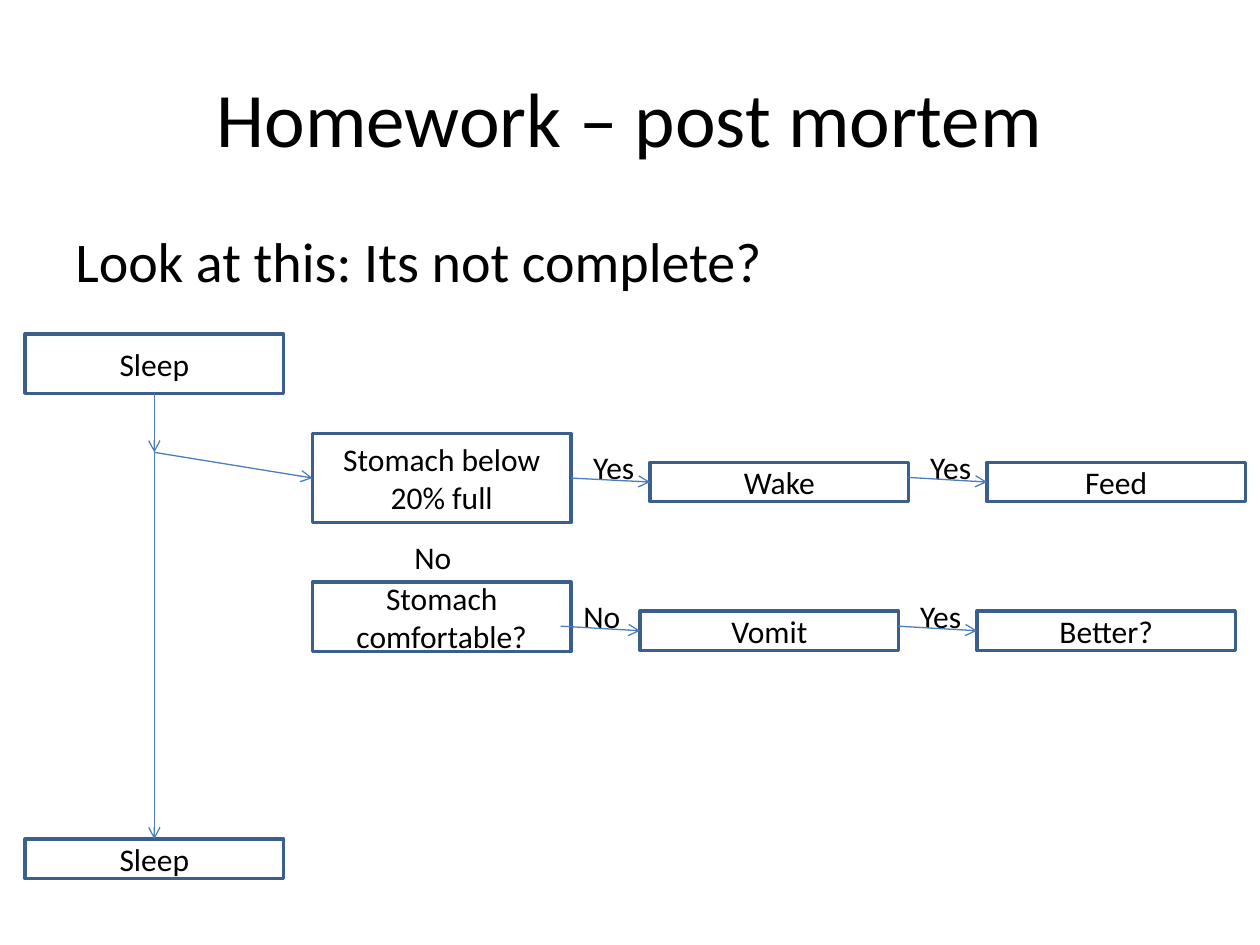
from lxml import etree
from pptx import Presentation
from pptx import util as u
from pptx.dml.color import RGBColor
from pptx.enum import shapes, text
from pptx.oxml import ns

BLACK, WHITE, OUTLINE, ARROW = "000000", "FFFFFF", "3A5F8C", "4B7EBC"
BOX_WIDTH, BOX_HEIGHT = 147.6, 22.5


def color(value):
    """Turn a hex string into a colour."""
    return RGBColor.from_string(value)


def write(shape, words, size, alignment, anchor):
    """Write one paragraph into a shape."""
    frame = shape.text_frame
    frame.word_wrap = True
    frame.vertical_anchor = anchor
    paragraph = frame.paragraphs[0]
    paragraph.alignment = alignment
    run = paragraph.add_run()
    run.text = words
    run.font.name = "Calibri"
    run.font.size = u.Pt(size)
    run.font.color.rgb = color(BLACK)


def add_text(slide, box, words, size, alignment=text.PP_ALIGN.LEFT,
             anchor=text.MSO_ANCHOR.TOP):
    """Place a text box in the given box."""
    shape = slide.shapes.add_textbox(*map(u.Pt, box))
    write(shape, words, size, alignment, anchor)


def add_step(slide, left, top, words, height=BOX_HEIGHT):
    """Place an outlined flowchart step."""
    shape = slide.shapes.add_shape(
        shapes.MSO_SHAPE.RECTANGLE, *map(u.Pt, (left, top, BOX_WIDTH, height)))
    shape.shadow.inherit = False
    shape.fill.background()
    shape.line.color.rgb = color(OUTLINE)
    shape.line.width = u.Pt(2)
    write(shape, words, 18, text.PP_ALIGN.CENTER, text.MSO_ANCHOR.MIDDLE)
    return shape


def add_arrow(slide, start, end, source=None, target=None):
    """Draw an arrow, joined to (shape, site) pairs where given."""
    arrow = slide.shapes.add_connector(
        shapes.MSO_CONNECTOR.STRAIGHT, *map(u.Pt, (*start, *end)))
    if source:
        arrow.begin_connect(*source)
    if target:
        arrow.end_connect(*target)
    arrow.line.color.rgb = color(ARROW)
    arrow.line.width = u.Pt(0.75)
    line = arrow.line._get_or_add_ln()
    etree.SubElement(line, ns.qn("a:tailEnd"), type="arrow")
    etree.SubElement(arrow._element.spPr, ns.qn("a:effectLst"))


def add_heading(slide, left, top, width):
    """Place the title and the question under it."""
    add_text(slide, (left, top, width, 90), "Homework – post mortem", 44,
             text.PP_ALIGN.CENTER, text.MSO_ANCHOR.MIDDLE)
    add_text(slide, (left, top + 104.4, width, 356.4),
             "Look at this: Its not complete?", 32)


def add_branch(slide, left, top, steps, source=None):
    """Place a row of steps, each reached by a labelled arrow."""
    for index, (label, words) in enumerate(steps):
        x = left + index * 192.5
        step = add_step(slide, x, top, words)
        add_text(slide, (x - 39.6, top - 11.5, 51, 29), label, 18)
        add_arrow(slide, (x - 45.4, top + 8.6), (x, top + BOX_HEIGHT / 2),
                  source if index == 0 else None, (step, 1))


def add_flowchart(slide, left, top):
    """Place the sleep column and the two branches of questions."""
    center = left + BOX_WIDTH / 2
    junction = (center, top + 67.7)
    question_left = left + 164.2

    sleep = add_step(slide, left, top, "Sleep", 34)
    sleep_again = add_step(slide, left, top + 288.7, "Sleep")
    hungry = add_step(slide, question_left, top + 56.9,
                      "Stomach below 20% full", 51)
    add_step(slide, question_left, top + 141.8, "Stomach comfortable?", 39.7)

    add_arrow(slide, (center, top + 34), junction, source=(sleep, 2))
    add_arrow(slide, junction, (question_left, top + 82), target=(hungry, 1))
    add_arrow(slide, junction, (center, top + 288.7), target=(sleep_again, 0))
    add_text(slide, (left + 215.3, top + 113, 51, 29), "No", 18)

    add_branch(slide, left + 357.1, top + 73.4,
               [("Yes", "Wake"), ("Yes", "Feed")], (hungry, 3))
    add_branch(slide, left + 351.4, top + 158.4,
               [("No", "Vomit"), ("Yes", "Better?")])


def main():
    """Build and save the presentation."""
    presentation = Presentation()
    presentation.slide_width, presentation.slide_height = u.Pt(720), u.Pt(540)
    slide = presentation.slides.add_slide(presentation.slide_layouts[6])
    slide.background.fill.solid()
    slide.background.fill.fore_color.rgb = color(WHITE)
    add_heading(slide, 36, 21.6, 648)
    add_flowchart(slide, 14.4, 190.8)
    presentation.save("out.pptx")


if __name__ == "__main__":
    main()
